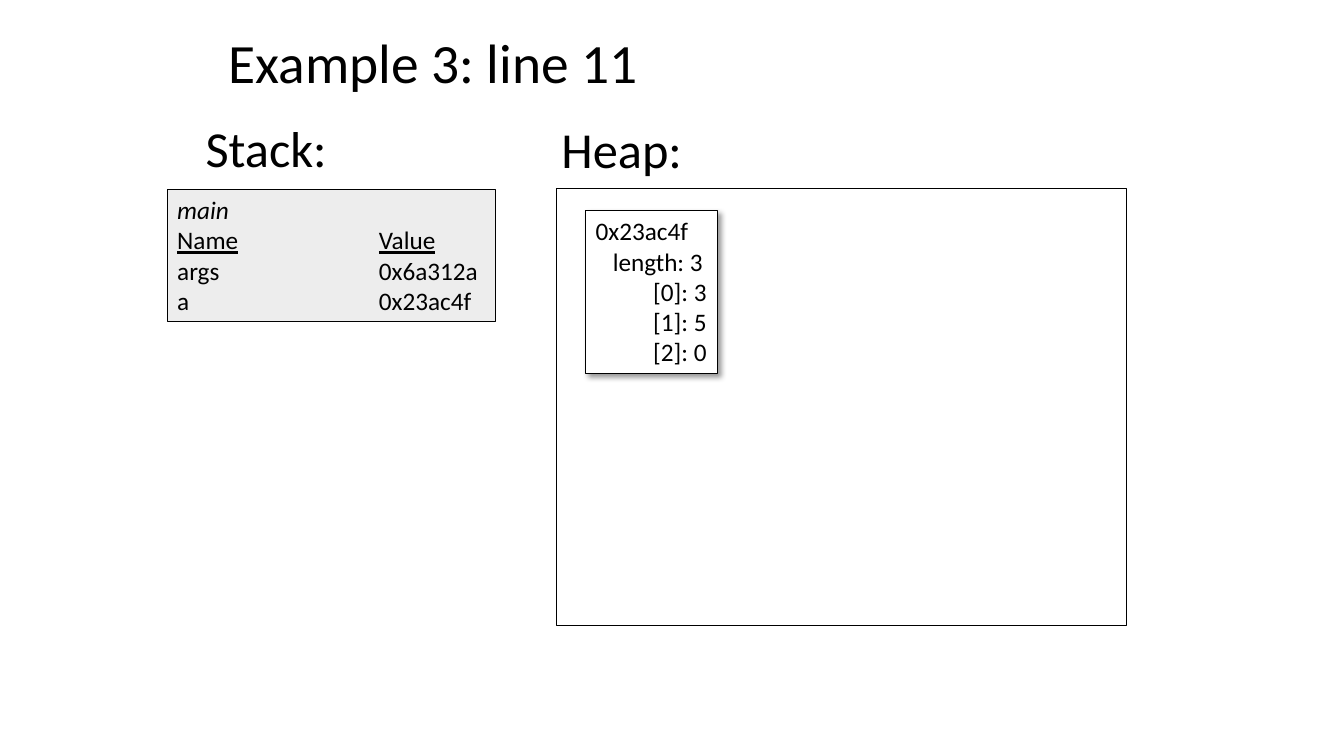
from dataclasses import dataclass

from lxml.etree import SubElement
from pptx import Presentation
from pptx.dml.color import RGBColor
from pptx.enum.shapes import MSO_SHAPE
from pptx.enum.text import MSO_ANCHOR, PP_ALIGN
from pptx.oxml.ns import qn
from pptx.util import Inches, Pt


@dataclass(frozen=True)
class Theme:
    font: str = "Calibri"
    ink: str = "000000"
    frame_fill: str = "EDEDED"
    object_fill: str = "FFFFFF"
    title_size: float = 39.6
    heading_size: float = 36
    body_size: float = 18
    line_width: float = 0.75


class MemoryDiagram:
    def __init__(self, slide, theme):
        self.slide = slide
        self.theme = theme

    def add_text(self, paragraph, text, size, italic=False, underline=False):
        run = paragraph.add_run()
        run.text = text
        font = run.font
        font.name = self.theme.font
        font.size = Pt(size)
        font.color.rgb = RGBColor.from_string(self.theme.ink)
        font.italic = italic
        font.underline = underline

    def label(self, box, text, size, anchor=MSO_ANCHOR.TOP, line_spacing=1.0):
        shape = self.slide.shapes.add_textbox(*map(Inches, box))
        frame = shape.text_frame
        frame.word_wrap = True
        frame.vertical_anchor = anchor
        paragraph = frame.paragraphs[0]
        paragraph.line_spacing = line_spacing
        self.add_text(paragraph, text, size)

    def rectangle(self, box, fill=None):
        shape = self.slide.shapes.add_shape(MSO_SHAPE.RECTANGLE, *map(Inches, box))
        shape.shadow.inherit = False
        if fill:
            shape.fill.solid()
            shape.fill.fore_color.rgb = RGBColor.from_string(fill)
        else:
            shape.fill.background()
        shape.line.color.rgb = RGBColor.from_string(self.theme.ink)
        shape.line.width = Pt(self.theme.line_width)
        shape.text_frame.word_wrap = True
        shape.text_frame.vertical_anchor = MSO_ANCHOR.TOP
        return shape

    def add_line(self, shape, position):
        frame = shape.text_frame
        paragraph = frame.add_paragraph() if position else frame.paragraphs[0]
        paragraph.alignment = PP_ALIGN.LEFT
        return paragraph

    def stack_frame(self, box, method, rows, value_tab):
        shape = self.rectangle(box, self.theme.frame_fill)
        size = self.theme.body_size
        self.add_text(self.add_line(shape, 0), method, size, italic=True)
        for position, (name, value) in enumerate([("Name", "Value"), *rows], start=1):
            is_header = position == 1
            paragraph = self.add_line(shape, position)
            properties = paragraph._p.get_or_add_pPr()
            tab_list = SubElement(properties, qn("a:tabLst"))
            SubElement(tab_list, qn("a:tab"), pos=str(Inches(value_tab)), algn="l")
            self.add_text(paragraph, name, size, underline=is_header)
            self.add_text(paragraph, "\t", size)
            self.add_text(paragraph, value, size, underline=is_header)

    def heap_object(self, box, lines):
        shape = self.rectangle(box, self.theme.object_fill)
        self.drop_shadow(shape)
        for position, (text, indent) in enumerate(lines):
            paragraph = self.add_line(shape, position)
            properties = paragraph._p.get_or_add_pPr()
            properties.set("marL", str(Inches(indent)))
            properties.set("indent", "0")
            self.add_text(paragraph, text, self.theme.body_size)

    def drop_shadow(self, shape):
        effects = shape._element.spPr.find(qn("a:effectLst"))
        shadow = SubElement(
            effects, qn("a:outerShdw"), blurRad=str(Pt(4)), dist=str(Pt(3)),
            dir=str(45 * 60000), algn="tl", rotWithShape="0",
        )
        color = SubElement(shadow, qn("a:srgbClr"), val=self.theme.ink)
        SubElement(color, qn("a:alpha"), val="40000")


def main():
    presentation = Presentation()
    presentation.slide_width = Inches(13.33)
    presentation.slide_height = Inches(7.5)
    slide = presentation.slides.add_slide(presentation.slide_layouts[6])
    theme = Theme()
    diagram = MemoryDiagram(slide, theme)

    diagram.label((2.17, 0.3, 9, 0.7), "Example 3: line 11", theme.title_size,
                  MSO_ANCHOR.MIDDLE, 0.9)
    diagram.label((1.94, 1.11, 1.4, 0.71), "Stack:", theme.heading_size)
    diagram.label((5.47, 1.12, 1.4, 0.71), "Heap:", theme.heading_size)

    variables = [("args", "0x6a312a"), ("a", "0x23ac4f")]
    diagram.stack_frame((1.66, 1.88, 3.26, 1.31), "main", variables, value_tab=2)

    diagram.rectangle((5.52, 1.87, 5.65, 4.34))
    elements = [(f"[{index}]: {value}", 0.57) for index, value in enumerate([3, 5, 0])]
    diagram.heap_object((5.81, 2.09, 1.31, 1.62),
                        [("0x23ac4f", 0), ("length: 3", 0.17), *elements])

    presentation.save("out.pptx")


if __name__ == "__main__":
    main()
